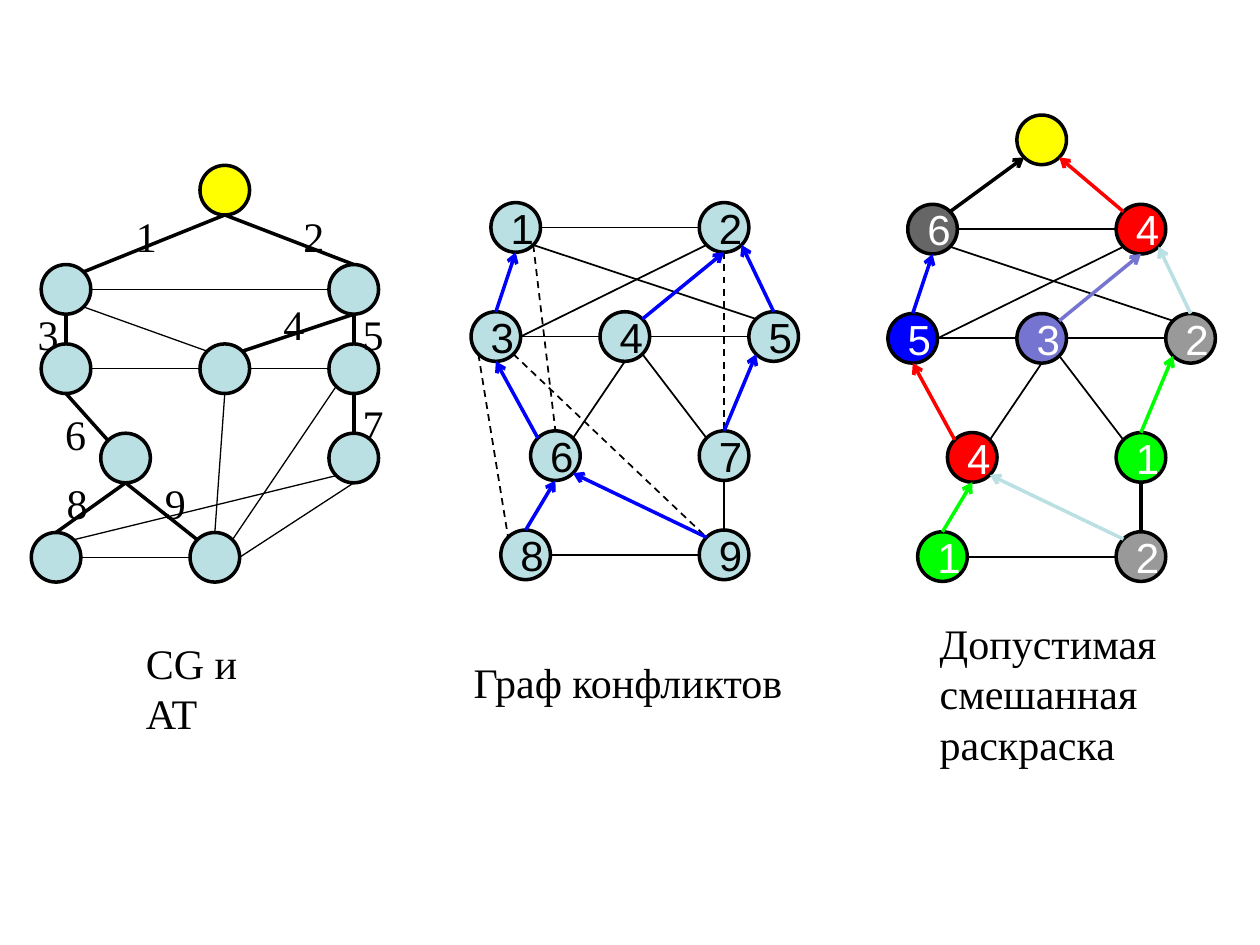
from lxml import etree
from pptx import Presentation
from pptx.dml.color import RGBColor
from pptx.enum.dml import MSO_LINE
from pptx.enum.shapes import MSO_CONNECTOR, MSO_SHAPE
from pptx.enum.text import MSO_ANCHOR, MSO_AUTO_SIZE, PP_ALIGN
from pptx.oxml.ns import qn
from pptx.util import Pt

DASH = MSO_LINE.DASH
STRAIGHT = MSO_CONNECTOR.STRAIGHT
OVAL = MSO_SHAPE.OVAL
MIDDLE = MSO_ANCHOR.MIDDLE
GROW = MSO_AUTO_SIZE.SHAPE_TO_FIT_TEXT
LEFT, CENTER = PP_ALIGN.LEFT, PP_ALIGN.CENTER

HEX = {
    "black": "000000", "white": "FFFFFF", "pale": "BBE0E3", "yellow": "FFFF00",
    "blue": "0000FF", "red": "FF0000", "green": "00FF00", "violet": "7575D1",
    "gray": "999999", "dark": "666666",
}
SERIF, SANS = "Times New Roman", "Arial"
GRID = 5.67
SIZE = 5 * GRID
BOLD, THIN, HAIR = 2, 1, 0.75

# Node places are counted in grid steps from each graph's origin.
TREE_AT, CLASH_AT, PAINT_AT = (17.9, 94.5), (269.2, 115.8), (507.4, 116.8)
TREE = {
    "R": (17, 0), "A": (1, 10), "B": (30, 10), "C": (1, 18), "D": (17, 18),
    "E": (30, 18), "F": (7, 27), "G": (30, 27), "H": (0, 37), "I": (16, 37),
}
TREE_BOLD = ["R.s B.n", "R.s A.ne", "B.s E.n", "D.ne B.s", "A.s C.n",
             "E.s G.n", "C.s F.nw", "F.s I.nw", "F.s H.n"]
TREE_HAIR = ["A.e B.w", "A.se D.nw", "D.e E.w", "I.e G.s", "I.ne E.sw",
             "D.s I.n", "C.e D.w", "I.w H.e", "H.ne G.sw"]
CLASH = {
    "1": (2, 0), "2": (23, 0), "3": (0, 11), "4": (13, 11), "5": (28, 11),
    "6": (6, 23), "7": (23, 23), "8": (3, 33), "9": (23, 33),
}
ROOT = {"R": (13, -9)}
PLAIN = ["1.e 2.w", "1.se 5.nw", "3.e 2.sw", "3.e 4.w", "4.e 5.w",
         "6.ne 4.s", "4.se 7.nw", "8.e 9.w"]
STEM = ["7.s 9.n"]
DASHED = ["1.se 6.n", "2.s 7.n", "3.sw 8.nw", "3.se 9.nw"]
ARROWS = ["3.n 1.s", "4.ne 2.s", "5.n 2.se", "6.nw 3.s", "7.n 5.sw",
          "8.n 6.s", "9.nw 6.se"]
ROOT_ARROWS = ["1.ne R.sw", "2.nw R.se"]
PAINT = {
    "1": ("6", "dark"), "2": ("4", "red"), "3": ("5", "blue"),
    "4": ("3", "violet"), "5": ("2", "gray"), "6": ("4", "red"),
    "7": ("1", "green"), "8": ("1", "green"), "9": ("2", "gray"),
}
ARROW_HUE = {"dark": "black", "gray": "pale"}

LABELS = [
    ("1", 70.6, 116.6), ("2", 166.3, 116.6), ("3", 14.4, 172.8),
    ("4", 154.8, 167), ("5", 200.2, 172.8), ("6", 30.2, 229.7),
    ("7", 200.2, 223.9), ("8", 31, 269.3), ("9", 87.1, 269.3),
]
CAPTIONS = [
    ("CG и AT", 76.3, 360.7, 101.5, 36),
    ("Граф конфликтов", 263.5, 371.5, 193, 36),
    ("Допустимая смешанная раскраска", 529.9, 349.2, 153.4, 94.3),
]


def color(name):
    """Return the named colour."""
    return RGBColor.from_string(HEX[name])


def write(frame, text, font=SERIF, hue="black", align=LEFT):
    """Put formatted text into a frame."""
    frame.word_wrap = True
    para = frame.paragraphs[0]
    para.alignment = align
    run = para.add_run()
    run.text = text
    run.font.size = Pt(24)
    run.font.name = font
    run.font.color.rgb = color(hue)


def box(slide, text, x, y, w, h):
    """Add a text box that grows with its text."""
    frame = slide.shapes.add_textbox(Pt(x), Pt(y), Pt(w), Pt(h)).text_frame
    write(frame, text)
    frame.auto_size = GROW


def node(slide, start, place, fill, text="", hue="black"):
    """Add one round node of a graph."""
    x, y = (base + step * GRID for base, step in zip(start, place))
    dot = slide.shapes.add_shape(OVAL, Pt(x), Pt(y), Pt(SIZE), Pt(SIZE))
    dot.shadow.inherit = False
    dot.fill.solid()
    dot.fill.fore_color.rgb = color(fill)
    dot.line.color.rgb = color("black")
    dot.line.width = Pt(BOLD)
    if text:
        dot.text_frame.vertical_anchor = MIDDLE
        write(dot.text_frame, text, font=SANS, hue=hue, align=CENTER)


def site(start, places, end):
    """Return the point on a node's rim, such as 'A.ne'."""
    name, side = end.split(".")
    dx = ("e" in side) - ("w" in side)
    dy = ("s" in side) - ("n" in side)
    reach = SIZE / 2 / (dx * dx + dy * dy) ** 0.5
    col, row = places[name]
    return (Pt(start[0] + col * GRID + SIZE / 2 + dx * reach),
            Pt(start[1] + row * GRID + SIZE / 2 + dy * reach))


def link(slide, start, places, edges, width, hue="black", dash=None, arrow=False):
    """Join pairs of node rims with straight lines."""
    for edge in edges:
        head, tail = (site(start, places, end) for end in edge.split())
        wire = slide.shapes.add_connector(STRAIGHT, *head, *tail)
        wire.line.color.rgb = color(hue)
        wire.line.width = Pt(width)
        if dash:
            wire.line.dash_style = dash
        props = wire.element.spPr
        if arrow:
            etree.SubElement(props.find(qn("a:ln")), qn("a:tailEnd"), type="arrow")
        etree.SubElement(props, qn("a:effectLst"))


def main():
    """Build the slide with three graphs."""
    deck = Presentation()
    deck.slide_width, deck.slide_height = Pt(720), Pt(540)
    slide = deck.slides.add_slide(deck.slide_layouts[6])

    for name, place in TREE.items():
        node(slide, TREE_AT, place, "yellow" if name == "R" else "pale")
    link(slide, TREE_AT, TREE, TREE_BOLD, BOLD)
    link(slide, TREE_AT, TREE, TREE_HAIR, HAIR)
    for text, x, y in LABELS:
        box(slide, text, x, y, 23.8, 28.8)

    for name, place in CLASH.items():
        node(slide, CLASH_AT, place, "pale", text=name)
    link(slide, CLASH_AT, CLASH, PLAIN + STEM, THIN)
    link(slide, CLASH_AT, CLASH, DASHED, THIN, dash=DASH)
    link(slide, CLASH_AT, CLASH, ARROWS, BOLD, hue="blue", arrow=True)

    for name, place in CLASH.items():
        text, fill = PAINT[name]
        node(slide, PAINT_AT, place, fill, text=text, hue="white")
    node(slide, PAINT_AT, ROOT["R"], "yellow")
    full = CLASH | ROOT
    link(slide, PAINT_AT, full, PLAIN, THIN)
    link(slide, PAINT_AT, full, STEM, BOLD)
    for edge in ARROWS + ROOT_ARROWS:
        fill = PAINT[edge[0]][1]
        hue = ARROW_HUE.get(fill, fill)
        link(slide, PAINT_AT, full, [edge], BOLD, hue=hue, arrow=True)

    for caption in CAPTIONS:
        box(slide, *caption)
    deck.save("out.pptx")


if __name__ == "__main__":
    main()
